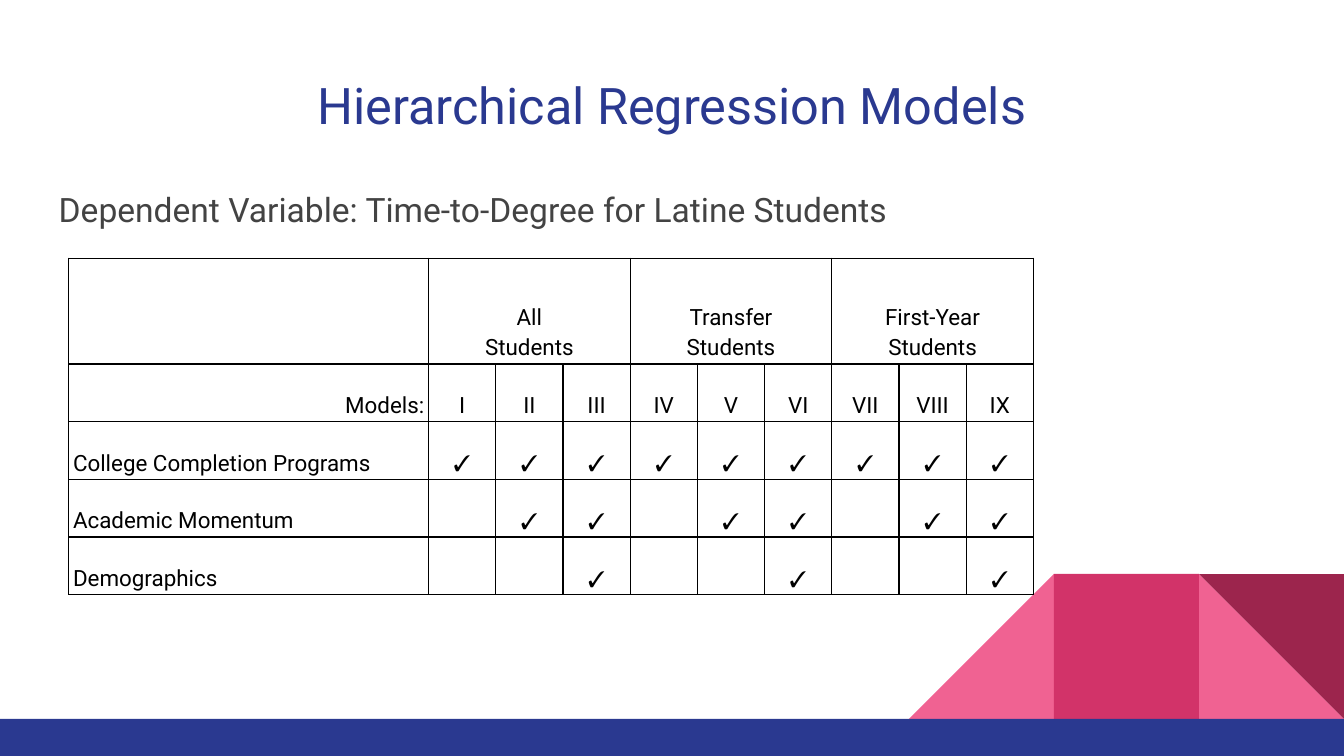
import pptx
import pptx.util
import pptx.dml.color
import pptx.oxml
from lxml import etree
from pptx.enum.shapes import MSO_SHAPE
from pptx.enum.text import MSO_ANCHOR, MSO_AUTO_SIZE, PP_ALIGN
from pptx.oxml.ns import nsdecls, qn
from pptx.util import Cm, Pt

TITLE = "Hierarchical Regression Models"
SUBTITLE = "Dependent Variable: Time-to-Degree for Latine Students"
STUDENT_GROUPS = ["All\nStudents", "Transfer\nStudents", "First-Year\nStudents"]
MODELS = ["I", "II", "III", "IV", "V", "VI", "VII", "VIII", "IX"]
# Each predictor block enters at this model within every student group
PREDICTORS = ["College Completion Programs", "Academic Momentum", "Demographics"]
CHECK = "✓"
MODELS_PER_GROUP = 3

SLIDE_W, SLIDE_H = 25.4, 14.29
BAR_H = 0.7
TILE = 2.74
TABLE_LEFT, TABLE_TOP = 1.3, 4.88
LABEL_W, MODEL_W = 6.8, 1.27
HEADER_H, ROW_H = 2.0, 1.09

NAVY, PINK, ROSE, WINE = "2A3990", "F06292", "D23369", "9C254D"
GREY, BLACK = "434343", "000000"


def rgb(color):
    return pptx.dml.color.RGBColor.from_string(color)


def format_text(frame, size, color, font="Roboto", align=PP_ALIGN.LEFT, spacing=1.0):
    for paragraph in frame.paragraphs:
        paragraph.alignment = align
        paragraph.line_spacing = spacing
        paragraph.space_before = Pt(0)
        for run in paragraph.runs:
            run.font.size = Pt(size)
            run.font.name = font
            run.font.color.rgb = rgb(color)


def add_block(slide, kind, color, left, top, width, height):
    block = slide.shapes.add_shape(kind, Cm(left), Cm(top), Cm(width), Cm(height))
    block.shadow.inherit = False
    block.fill.solid()
    block.fill.fore_color.rgb = rgb(color)
    block.line.fill.background()
    return block


def add_decoration(slide):
    bar_top = SLIDE_H - BAR_H
    triangle, square = MSO_SHAPE.RIGHT_TRIANGLE, MSO_SHAPE.RECTANGLE

    def add_tile(kind, color, steps_from_right):
        left = SLIDE_W - steps_from_right * TILE
        return add_block(slide, kind, color, left, bar_top - TILE, TILE, TILE)

    add_tile(triangle, PINK, 1)
    left_slope = add_tile(triangle, PINK, 3)
    left_slope.element.spPr.find(qn("a:xfrm")).set("flipH", "1")
    add_tile(square, ROSE, 2)
    add_tile(triangle, WINE, 1).rotation = 180
    add_block(slide, square, NAVY, 0, bar_top, SLIDE_W, BAR_H)


def fill_placeholder(placeholder, text, top, height):
    placeholder.left, placeholder.top = Cm(0.86), Cm(top)
    placeholder.width, placeholder.height = Cm(23.67), Cm(height)
    frame = placeholder.text_frame
    frame.text = text
    frame.word_wrap = True
    frame.auto_size = MSO_AUTO_SIZE.NONE
    frame.margin_left = frame.margin_right = Cm(0.25)
    frame.margin_top = frame.margin_bottom = Cm(0.25)
    return frame


def add_borders(cell):
    properties = cell._tc.get_or_add_tcPr()
    for position, side in enumerate(("lnL", "lnR", "lnT", "lnB")):
        border = pptx.oxml.parse_xml(
            f'<a:{side} {nsdecls("a")} w="{Pt(0.75)}"><a:solidFill>'
            f'<a:srgbClr val="{BLACK}"/></a:solidFill></a:{side}>'
        )
        properties.insert(position, border)


def set_cell(cell, text, align, font="Roboto"):
    cell.text_frame.text = text
    format_text(cell.text_frame, 12, BLACK, font, align, 1.15)


def add_model_table(slide):
    row_count, column_count = 2 + len(PREDICTORS), 1 + len(MODELS)
    table = slide.shapes.add_table(
        row_count, column_count, Cm(TABLE_LEFT), Cm(TABLE_TOP),
        Cm(LABEL_W + MODEL_W * len(MODELS)), Cm(HEADER_H + ROW_H * (row_count - 1)),
    ).table
    table.first_row = table.horz_banding = False
    for index, column in enumerate(table.columns):
        column.width = Cm(MODEL_W if index else LABEL_W)
    for index, row in enumerate(table.rows):
        row.height = Cm(ROW_H if index else HEADER_H)

    for cell in table.iter_cells():
        cell.fill.background()
        cell.vertical_anchor = MSO_ANCHOR.BOTTOM
        cell.margin_left = cell.margin_right = Cm(0.08)
        cell.margin_top = cell.margin_bottom = Cm(0.05)
        add_borders(cell)

    for index, group in enumerate(STUDENT_GROUPS):
        first = 1 + index * MODELS_PER_GROUP
        header = table.cell(0, first)
        header.merge(table.cell(0, first + MODELS_PER_GROUP - 1))
        set_cell(header, group, PP_ALIGN.CENTER)

    set_cell(table.cell(1, 0), "Models:", PP_ALIGN.RIGHT)
    for column, model in enumerate(MODELS, start=1):
        set_cell(table.cell(1, column), model, PP_ALIGN.CENTER)

    for entry, predictor in enumerate(PREDICTORS):
        set_cell(table.cell(entry + 2, 0), predictor, PP_ALIGN.LEFT)
        for index in range(len(MODELS)):
            if index % MODELS_PER_GROUP >= entry:
                set_cell(table.cell(entry + 2, index + 1), CHECK,
                         PP_ALIGN.CENTER, "Times New Roman")


def main():
    deck = pptx.Presentation()
    deck.slide_width, deck.slide_height = Cm(SLIDE_W), Cm(SLIDE_H)
    slide = deck.slides.add_slide(deck.slide_layouts[1])
    title, body = slide.placeholders

    title_frame = fill_placeholder(title, TITLE, 1.14, 1.68)
    title_frame.vertical_anchor = MSO_ANCHOR.MIDDLE
    format_text(title_frame, 27, NAVY, align=PP_ALIGN.CENTER)

    body_frame = fill_placeholder(body, SUBTITLE, 3.2, 9.27)
    body_frame.vertical_anchor = MSO_ANCHOR.TOP
    format_text(body_frame, 18, GREY, spacing=1.15)
    bullet_settings = body_frame.paragraphs[0]._p.get_or_add_pPr()
    bullet_settings.set("marL", "0")
    bullet_settings.set("indent", "0")
    etree.SubElement(bullet_settings, qn("a:buNone"))

    add_decoration(slide)
    add_model_table(slide)
    deck.save("out.pptx")


if __name__ == "__main__":
    main()
